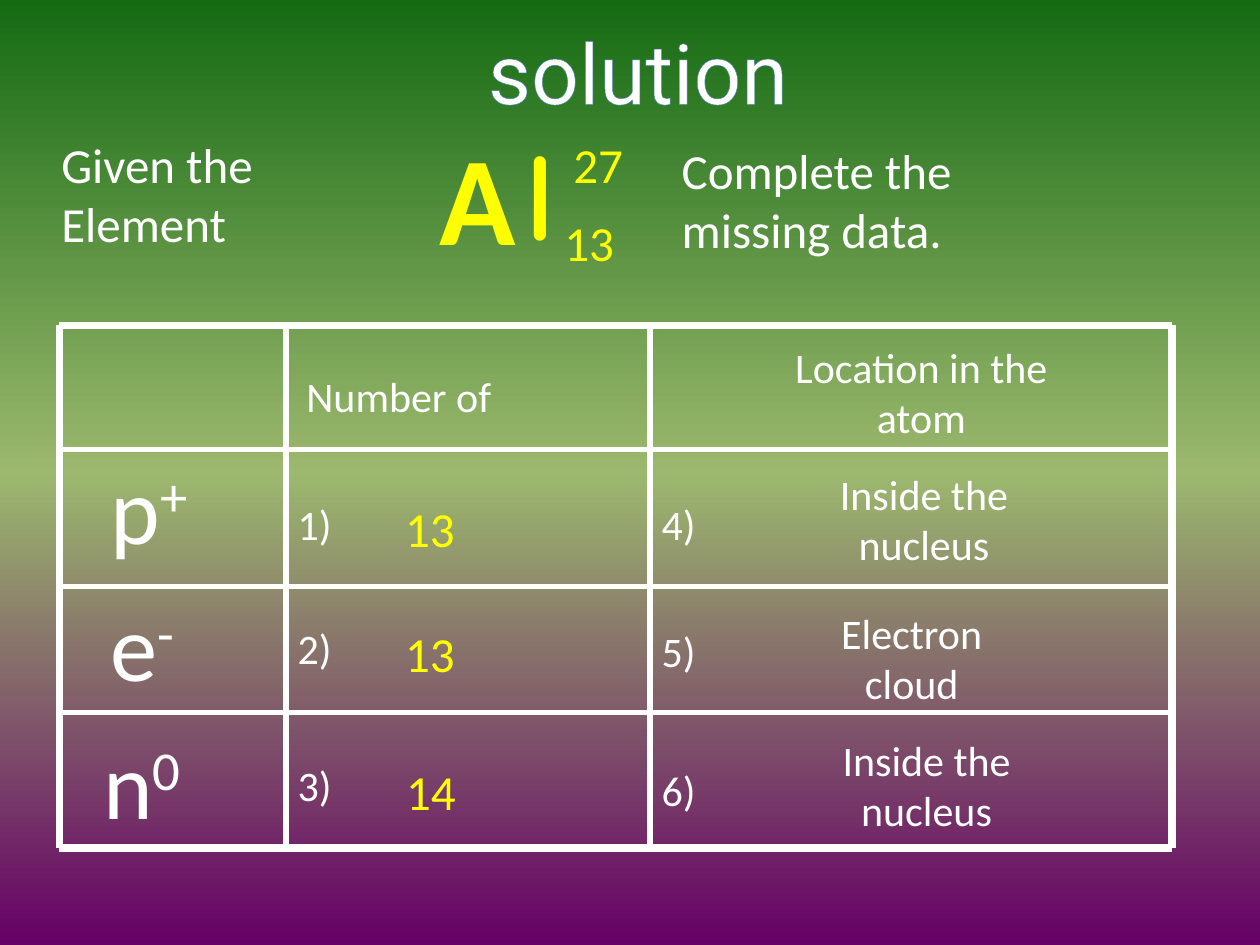
from copy import deepcopy
from dataclasses import dataclass

from lxml import etree
from pptx import Presentation
from pptx.dml.color import RGBColor
from pptx.enum import shapes, text
from pptx.oxml.ns import qn
from pptx.util import Pt


@dataclass(frozen=True)
class Theme:
    white: str = "FFFFFF"
    yellow: str = "FFFF00"
    orange: str = "EB6A00"
    blue: str = "4F81BD"
    background: tuple = ((0, "660066"), (0.5, "9CB86E"), (1, "156B13"))
    body_font: str = "Calibri"
    letter_font: str = "Comic Neue"
    title_font: str = "Roboto"
    element: int = 72
    particle: int = 54
    title: int = 48
    large: int = 28
    label: int = 24
    frame_line: float = 4.5
    grid_line: float = 3


class SlideBuilder:
    def __init__(self, deck, theme):
        self.theme = theme
        self.page = deck.slides.add_slide(deck.slide_layouts[5])

    def background(self):
        fill = self.page.background.fill
        fill.gradient()
        fill.gradient_angle = 90
        stop_list = self.page.element.find(".//" + qn("a:gsLst"))
        stop_list.append(deepcopy(stop_list[0]))
        for stop, (position, color) in zip(fill.gradient_stops, self.theme.background):
            stop.position = position
            stop.color.rgb = RGBColor.from_string(color)

    def fill_text(self, box, lines, size, color, font=None, center=False,
                  bold=False, outline=None):
        """Fill a box; a line is a string or a (base, superscript) pair."""
        frame = box.text_frame
        frame.word_wrap = True
        frame.auto_size = text.MSO_AUTO_SIZE.NONE
        frame.vertical_anchor = text.MSO_ANCHOR.TOP
        for index, line in enumerate(lines):
            para = frame.add_paragraph() if index else frame.paragraphs[0]
            para.alignment = text.PP_ALIGN.CENTER if center else text.PP_ALIGN.LEFT
            parts = (line,) if isinstance(line, str) else line
            for level, part in enumerate(parts):
                span = para.add_run()
                span.text = part
                span.font.name = font or self.theme.body_font
                span.font.size = Pt(size)
                span.font.bold = bold
                span.font.color.rgb = RGBColor.from_string(color)
                properties = span._r.get_or_add_rPr()
                if level:
                    properties.set("baseline", "30000")
                if outline:
                    self.outline(properties, *outline)

    def outline(self, properties, color, width):
        line = etree.Element(qn("a:ln"), w=str(int(Pt(width))))
        fill = etree.SubElement(line, qn("a:solidFill"))
        etree.SubElement(fill, qn("a:srgbClr"), val=color)
        properties.insert(0, line)

    def title(self, wording, left, top, width, height):
        box = self.page.shapes.title
        box.left, box.top, box.width, box.height = map(Pt, (left, top, width, height))
        self.fill_text(box, [wording], self.theme.title, self.theme.white,
                       self.theme.title_font, center=True,
                       outline=(self.theme.blue, 0.8))

    def textbox(self, lines, left, top, width, height, size, color,
                parent=None, **style):
        holder = parent.shapes if parent else self.page.shapes
        box = holder.add_textbox(*map(Pt, (left, top, width, height)))
        self.fill_text(box, lines, size, color, **style)

    def line(self, x1, y1, x2, y2, width):
        line = self.page.shapes.add_connector(
            shapes.MSO_CONNECTOR.STRAIGHT, *map(Pt, (x1, y1, x2, y2)))
        line.line.color.rgb = RGBColor.from_string(self.theme.white)
        line.line.width = Pt(width)
        etree.SubElement(line._element.spPr, qn("a:effectLst"))

    def grid(self, columns, rows):
        """Rule a grid whose outer lines are heavier than the inner ones."""
        def weight(value, values):
            outer = value in (values[0], values[-1])
            return self.theme.frame_line if outer else self.theme.grid_line

        for x in columns:
            self.line(x, rows[0], x, rows[-1], weight(x, columns))
        for y in rows:
            self.line(columns[0], y, columns[-1], y, weight(y, rows))

    def element_symbol(self):
        theme = self.theme
        group = self.page.shapes.add_group_shape()
        letter = dict(size=theme.element, color=theme.yellow, parent=group,
                      center=True, bold=True, outline=(theme.orange, 2.48))
        self.textbox(["A"], 222, 65, 102, 94, **letter)
        self.textbox(["l"], 281.5, 62, 54, 94, font=theme.letter_font, **letter)
        for number, left, top in (("13", 315.5, 118), ("27", 320.5, 73.5)):
            self.textbox([number], left, top, 67, 41, theme.large, theme.yellow,
                         parent=group)


# Each cell is (content, left, top).
PARTICLES = [
    [(("p", "+"), 56, 253.5), ("1)", 163, 281.5), ("13", 224.5, 281.5),
     ("4)", 371, 281.5), (("Inside the", "nucleus"), 427.5, 264)],
    [(("e", "-"), 56, 332), ("2)", 163, 352), ("13", 224.5, 353),
     ("5)", 371, 354), (("Electron", "cloud"), 420.5, 343.5)],
    [(("n", "0"), 52, 410.5), ("3)", 163, 430.5), ("14", 225, 431.5),
     ("6)", 371, 433.5), (("Inside the", "nucleus"), 429, 416)],
]


def main():
    theme = Theme()
    deck = Presentation()
    deck.slide_width, deck.slide_height = Pt(720), Pt(540)
    slide = SlideBuilder(deck, theme)
    slide.background()
    slide.title("solution", 178, 8, 373, 65.5)

    slide.textbox(["Given the", "Element"], 28, 73.5, 230, 75, theme.large, theme.white)
    slide.element_symbol()
    slide.textbox(["Complete the", "missing data."], 382.5, 77, 308, 75,
                  theme.large, theme.white)

    slide.grid([34, 163.5, 371.5, 669.5], [186, 257, 335, 407, 484.5])
    slide.textbox(["Number of"], 168, 208, 200, 36.5, theme.label, theme.white)
    slide.textbox(["Location in the", "atom"], 388, 191.5, 277, 65.5,
                  theme.label, theme.white, center=True)

    for symbol, count_label, count, place_label, place in PARTICLES:
        slide.textbox([symbol[0]], *symbol[1:], 100, 73, theme.particle, theme.white)
        for wording, left, top in (count_label, place_label):
            slide.textbox([wording], left, top, 62, 36.5, theme.label, theme.white)
        slide.textbox([count[0]], *count[1:], 67, 41, theme.large, theme.yellow)
        slide.textbox(place[0], *place[1:], 201, 65.5, theme.label, theme.white,
                      center=True)

    deck.save("out.pptx")


if __name__ == "__main__":
    main()
